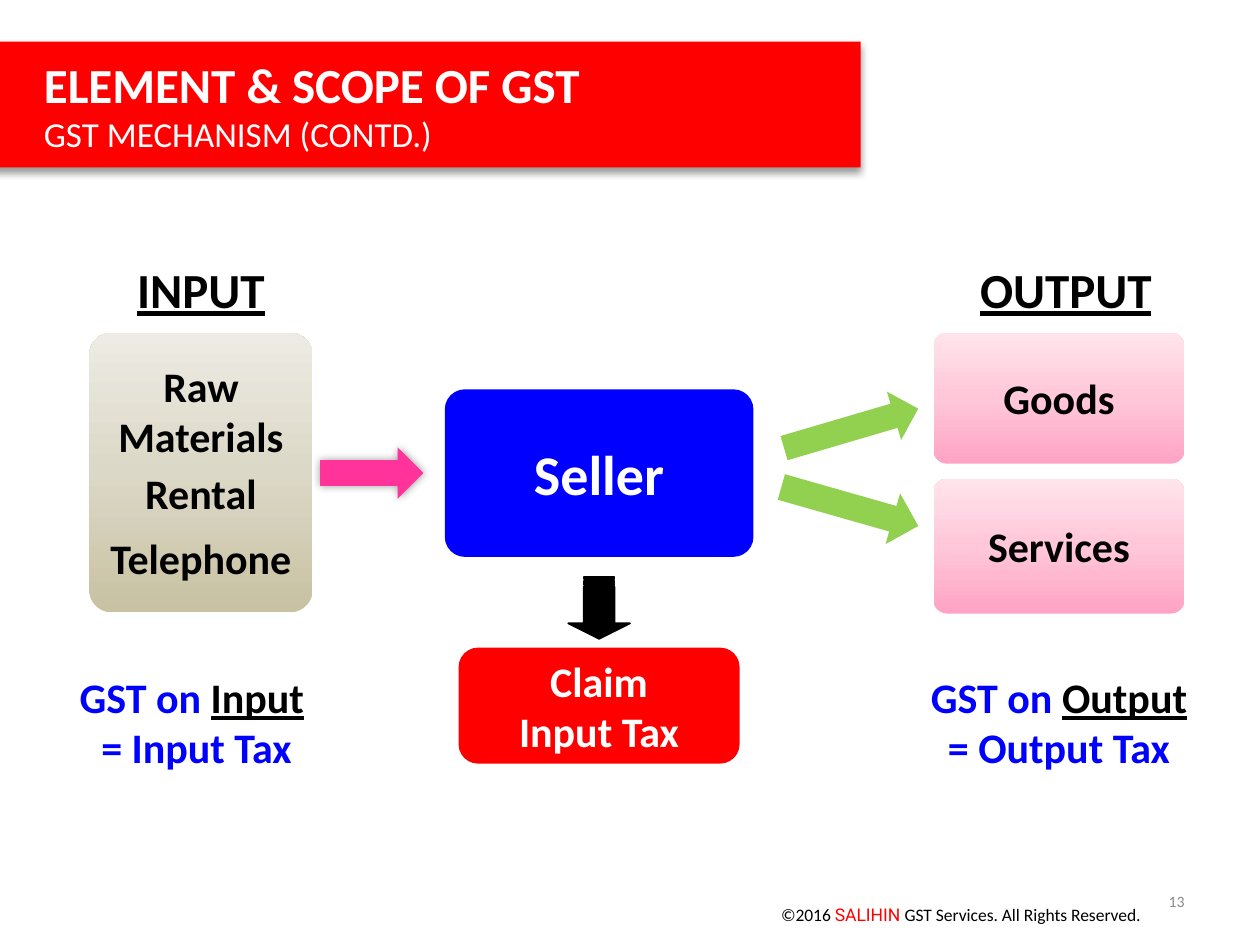
"""Build the GST mechanism slide with its input, seller and output flow."""
from dataclasses import dataclass
from typing import Any

import lxml.etree
import pptx
import pptx.dml.color
import pptx.enum.shapes
import pptx.enum.text
import pptx.oxml
import pptx.oxml.ns
import pptx.util

Inches = pptx.util.Inches
Kind = pptx.enum.shapes.MSO_SHAPE
Align = pptx.enum.text.PP_ALIGN
Anchor = pptx.enum.text.MSO_ANCHOR

COLOURS = {
    "black": "000000",
    "white": "FFFFFF",
    "red": "FF0000",
    "blue": "0000FF",
    "pink": "FF3399",
    "green": "92D050",
    "grey": "8C8C8C",
}
GRADIENTS = {
    "rose": ("FFA3C4", "FFC7D9", "FFE4EC"),
    "sand": ("C8C1A2", "DCD8C7", "EDEBE3"),
}


@dataclass
class Run:
    text: str
    colour: str = "black"
    size: float = 24
    bold: bool = True
    underline: bool = False
    name: str = "Calibri"


@dataclass
class Shadow:
    blur: float
    distance: float
    angle: int


@dataclass
class Block:
    box: tuple[float, float, float, float]
    fill: str
    kind: Any = Kind.ROUNDED_RECTANGLE
    lines: tuple[tuple[Run, ...], ...] = ()
    adjustments: tuple[float, ...] = ()
    rotation: float = 0
    shadow: Shadow | None = None
    align: Any = Align.CENTER
    indent: float = 0
    wrap: bool = True


@dataclass
class Label:
    box: tuple[float, float, float, float]
    lines: tuple[tuple[Run, ...], ...]
    align: Any = Align.CENTER
    anchor: Any = Anchor.TOP
    wrap: bool = True


def rgb(name: str) -> pptx.dml.color.RGBColor:
    """Return the named colour."""
    return pptx.dml.color.RGBColor.from_string(COLOURS[name])


def write_lines(shape: Any, lines: tuple, align: Any, anchor: Any, wrap: bool, indent: float = 0) -> None:
    """Write formatted runs into the shape, one paragraph per line."""
    frame = shape.text_frame
    for key, value in {"word_wrap": wrap, "vertical_anchor": anchor}.items():
        setattr(frame, key, value)
    for index, line in enumerate(lines):
        paragraph = frame.add_paragraph() if index else frame.paragraphs[0]
        paragraph.alignment = align
        if indent:
            paragraph._p.get_or_add_pPr().set("marL", str(Inches(indent)))
        for part in line:
            run = paragraph.add_run()
            run.text = part.text
            run.font.color.rgb = rgb(part.colour)
            formats = {
                "size": pptx.util.Pt(part.size),
                "bold": part.bold,
                "underline": part.underline,
                "name": part.name,
            }
            for key, value in formats.items():
                setattr(run.font, key, value)


def fill_gradient(shape: Any, stops: tuple[str, ...]) -> None:
    """Fill the shape with evenly spaced stops running from bottom to top."""
    shape.fill.background()
    empty = shape._element.spPr.find(pptx.oxml.ns.qn("a:noFill"))
    step = 100000 // (len(stops) - 1)
    marks = "".join(
        f'<a:gs pos="{index * step}"><a:srgbClr val="{colour}"/></a:gs>'
        for index, colour in enumerate(stops)
    )
    gradient = pptx.oxml.parse_xml(
        f'<a:gradFill {pptx.oxml.ns.nsdecls("a")} rotWithShape="1"><a:gsLst>{marks}</a:gsLst>'
        '<a:lin ang="16200000" scaled="0"/></a:gradFill>'
    )
    empty.getparent().replace(empty, gradient)


def add_shadow(shape: Any, shadow: Shadow) -> None:
    """Give the shape a soft black outer shadow."""
    effects = shape._element.spPr.find(pptx.oxml.ns.qn("a:effectLst"))
    outer = lxml.etree.SubElement(effects, pptx.oxml.ns.qn("a:outerShdw"))
    values = {
        "blurRad": pptx.util.Pt(shadow.blur),
        "dist": pptx.util.Pt(shadow.distance),
        "dir": shadow.angle * 60000,
        "rotWithShape": 0,
    }
    for key, value in values.items():
        outer.set(key, str(int(value)))
    colour = lxml.etree.SubElement(outer, pptx.oxml.ns.qn("a:srgbClr"), val=COLOURS["black"])
    lxml.etree.SubElement(colour, pptx.oxml.ns.qn("a:alpha"), val="40000")


def draw_block(slide: Any, block: Block) -> None:
    """Draw a filled preset shape with its text."""
    shape = slide.shapes.add_shape(block.kind, *map(Inches, block.box))
    shape.shadow.inherit = False
    shape.line.fill.background()
    shape.rotation = block.rotation
    for index, value in enumerate(block.adjustments):
        shape.adjustments[index] = value
    if block.fill in GRADIENTS:
        fill_gradient(shape, GRADIENTS[block.fill])
    else:
        shape.fill.solid()
        shape.fill.fore_color.rgb = rgb(block.fill)
    if block.shadow:
        add_shadow(shape, block.shadow)
    write_lines(shape, block.lines, block.align, Anchor.MIDDLE, block.wrap, block.indent)


def draw_label(slide: Any, label: Label) -> None:
    """Draw a text box."""
    shape = slide.shapes.add_textbox(*map(Inches, label.box))
    write_lines(shape, label.lines, label.align, label.anchor, label.wrap)


def draw_striped_arrow(slide: Any, left: int, top: int, size: int) -> None:
    """Draw a black arrow pointing down, with two stripes on its tail."""
    right, bottom = left + size, top + size
    inner_left, inner_right = left + size // 4, right - size // 4
    shoulder, unit = bottom - size // 4, size // 32
    builder = slide.shapes.build_freeform(right, shoulder)
    head = [
        (inner_right, shoulder), (inner_right, top + 5 * unit), (inner_left, top + 5 * unit),
        (inner_left, shoulder), (left, shoulder), ((left + right) // 2, bottom),
    ]
    builder.add_line_segments(head, close=True)
    for start, end in ((2, 4), (0, 1)):
        high, low = top + start * unit, top + end * unit
        builder.move_to(inner_right, high)
        builder.add_line_segments([(inner_left, high), (inner_left, low), (inner_right, low)], close=True)
    shape = builder.convert_to_shape()
    shape.shadow.inherit = False
    shape.fill.solid()
    shape.fill.fore_color.rgb = rgb("black")
    shape.line.color.rgb = rgb("black")
    shape.line.width = pptx.util.Pt(1)


BLOCKS = [
    Block((7.41, 3.8, 1.99, 1.07), "rose", lines=((Run("Services"),),), adjustments=(0.1,)),
    Block((7.41, 2.64, 1.99, 1.04), "rose", lines=((Run("Goods"),),), adjustments=(0.1,)),
    Block((3.53, 3.09, 2.45, 1.33), "blue", lines=((Run("Seller", "white", 32),),), adjustments=(0.12,)),
    Block((2.54, 3.55, 0.82, 0.41), "pink", Kind.RIGHT_ARROW, shadow=Shadow(5, 0, 0)),
    Block((0.71, 2.64, 1.77, 2.22), "sand", adjustments=(0.1,)),
    Block((6.18, 3.81, 1.13, 0.42), "green", Kind.RIGHT_ARROW, rotation=15.9),
    Block((6.2, 3.2, 1.11, 0.4), "green", Kind.RIGHT_ARROW, rotation=343.6),
    Block((3.64, 5.14, 2.23, 0.92), "red",
          lines=((Run("Claim", "white"),), (Run("Input Tax", "white"),)), wrap=False),
    Block((-0.25, 0.33, 7.08, 1), "red", Kind.RECTANGLE,
          lines=((Run("ELEMENT & SCOPE OF GST", "white", 28),),
                 (Run("GST MECHANISM (CONTD.)", "white", 20, False),)),
          shadow=Shadow(4, 3, 90), align=Align.LEFT, indent=0.5),
]
LABELS = [
    Label((6.1, 7.06, 3.21, 0.4),
          ((Run("©2016 ", size=10, bold=False), Run("SALIHIN ", "red", 10, False, name="Roboto"),
            Run("GST Services. All Rights Reserved.", size=10, bold=False)),), Align.LEFT, Anchor.MIDDLE),
    *(Label((0.71, top, 1.77, height), ((Run(text),),))
      for text, top, height in (("Raw Materials", 2.81, 0.91), ("Rental", 3.66, 0.5), ("Telephone", 4.18, 0.5))),
    *(Label((left, 2.01, width, 0.57), ((Run(text, size=28, underline=True),),), Align.LEFT, wrap=False)
      for text, left, width in (("INPUT", 0.99, 1.23), ("OUTPUT", 7.68, 1.58))),
    *(Label((left, 5.28, width, 0.91),
            ((Run("GST on ", "blue"), Run(side, underline=True), *rest), (Run(f"= {side} Tax", "blue"),)))
      for side, left, width, rest in (("Input", 0.19, 2.74, (Run(" "),)), ("Output", 7.06, 2.69, ()))),
    Label((7.17, 6.95, 2.33, 0.4), ((Run("13", "grey", 9, False),),), Align.RIGHT, Anchor.MIDDLE),
]


def main() -> None:
    """Build and save the presentation."""
    presentation = pptx.Presentation()
    for key, value in {"slide_width": Inches(10), "slide_height": Inches(7.5)}.items():
        setattr(presentation, key, value)
    slide = presentation.slides.add_slide(presentation.slide_layouts[6])
    for block in BLOCKS:
        draw_block(slide, block)
    draw_striped_arrow(slide, Inches(4.51), Inches(4.58), Inches(0.49))
    for label in LABELS:
        draw_label(slide, label)
    presentation.save("out.pptx")


if __name__ == "__main__":
    main()
